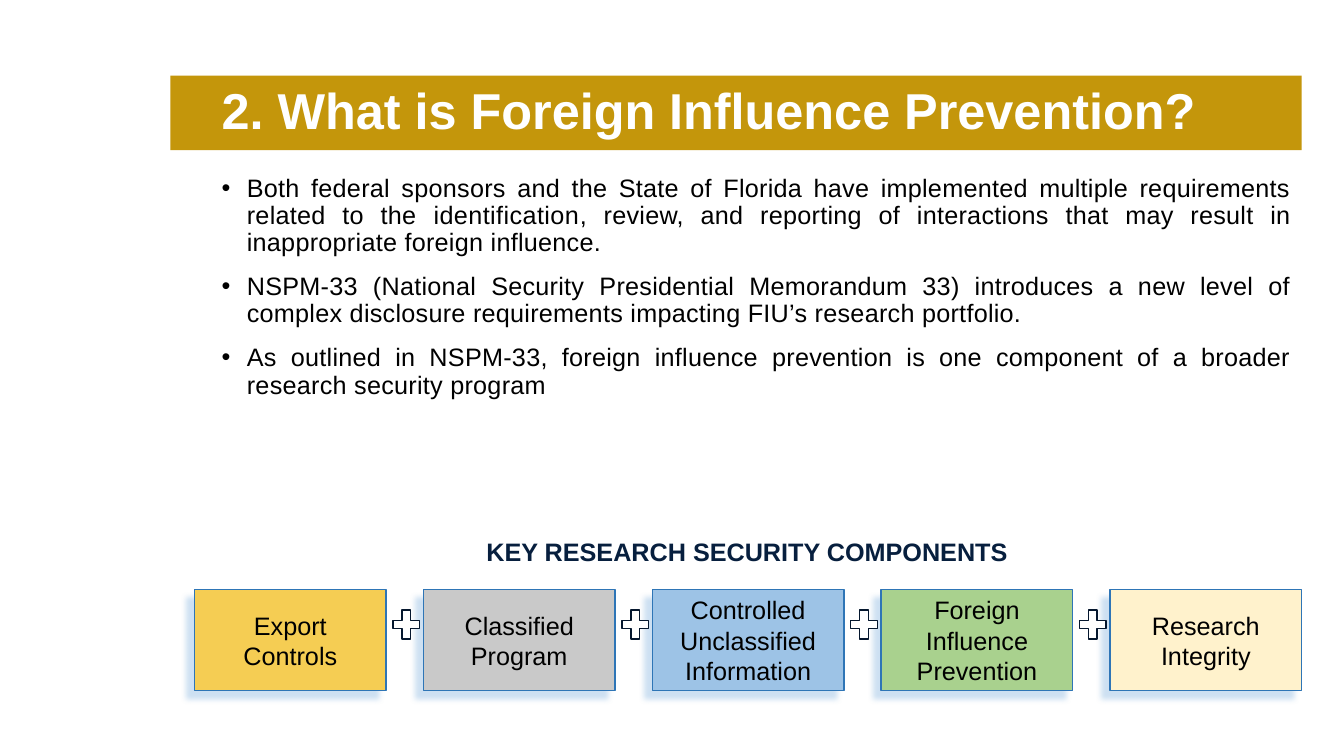
from lxml.etree import SubElement
from pptx import Presentation
from pptx.dml.color import RGBColor
from pptx.enum.shapes import MSO_SHAPE as Shape
from pptx.enum.text import MSO_ANCHOR as Anchor, PP_ALIGN as Align
from pptx.oxml.ns import qn
from pptx.util import Inches, Pt


def paint(target, color):
    """Give a fill, or the fill of a line or font, one solid colour."""
    target.solid()
    target.fore_color.rgb = RGBColor.from_string(color)


def add_span(para, text, size, color, bold=False):
    span = para.add_run()
    span.text = text
    span.font.name = "Arial"
    span.font.size = Pt(size)
    span.font.bold = bold
    paint(span.font.fill, color)
    return span


deck = Presentation()
deck.slide_width, deck.slide_height = Inches(13.33), Inches(7.5)
page = deck.slides.add_slide(deck.slide_layouts[6])

# Title on its gold band
band = page.shapes.add_shape(Shape.RECTANGLE, Inches(1.69), Inches(0.75), Inches(11.22), Inches(0.74))
band.shadow.inherit = False
paint(band.fill, "C4960B")
band.line.fill.background()

title = page.shapes.add_textbox(Inches(2.1), Inches(0.4), Inches(10.32), Inches(1.45)).text_frame
title.word_wrap = True
title.vertical_anchor = Anchor.MIDDLE
title.paragraphs[0].line_spacing = 0.9
add_span(title.paragraphs[0], "2. What is Foreign Influence Prevention?", 36, "FFFFFF", True)

# Bullets: each is a list of (text, letter spacing in hundredths of a point)
bullets = [
    [("Both federal sponsors and the State of Florida have implemented multiple requirements related to the ", 20),
     ("identification", 30),
     (", review, and reporting of interactions that may result in inappropriate foreign influence.", 20)],
    [("NSPM-33 (National Security Presidential Memorandum 33) introduces a new level of complex "
      "disclosure requirements impacting FIU’s research portfolio.", 20)],
    [("As outlined in NSPM-33, foreign influence prevention is one component of a broader "
      "research security program", 20)],
]
body = page.shapes.add_textbox(Inches(2.1), Inches(1.69), Inches(10.81), Inches(4.47)).text_frame
body.word_wrap = True
for index, pieces in enumerate(bullets):
    para = body.add_paragraph() if index else body.paragraphs[0]
    para.alignment = Align.JUSTIFY
    para.line_spacing = 0.9
    para.space_before = Pt(6 if index else 0)
    para.space_after = Pt(6)
    props = para._p.get_or_add_pPr()
    props.set("marL", str(Inches(0.25)))
    props.set("indent", str(Inches(-0.25)))
    SubElement(props, qn("a:buFont"), typeface="Arial")
    SubElement(props, qn("a:buChar"), char="•")
    for text, spacing in pieces:
        span = add_span(para, text, 18, "000000")
        span.font._element.set("spc", str(spacing))

# Row of components
components = [
    ("Export Controls", "F5CD53"),
    ("Classified Program", "C9C9C9"),
    ("Controlled Unclassified Information", "9DC3E6"),
    ("Foreign Influence Prevention", "A9D18E"),
    ("Research Integrity", "FFF2CC"),
]
pitch = 2.27
for index, (name, color) in enumerate(components):
    box = page.shapes.add_shape(Shape.RECTANGLE, Inches(1.93 + index * pitch), Inches(5.85),
                                Inches(1.9), Inches(1))
    paint(box.fill, color)
    paint(box.line.fill, "2E75B6")
    box.line.width = Pt(1)
    box.shadow.inherit = False
    effects = box._element.spPr.find(qn("a:effectLst"))
    shadow = SubElement(effects, qn("a:outerShdw"), blurRad=str(Pt(4)), dist=str(Pt(8)),
                        dir=str(135 * 60000), algn="tr", rotWithShape="0")
    tint = SubElement(shadow, qn("a:srgbClr"), val="9DC3E6")
    SubElement(tint, qn("a:alpha"), val="50000")
    frame = box.text_frame
    frame.word_wrap = True
    frame.vertical_anchor = Anchor.MIDDLE
    frame.paragraphs[0].alignment = Align.CENTER
    add_span(frame.paragraphs[0], name, 18, "000000")

for index in range(len(components) - 1):
    plus = page.shapes.add_shape(Shape.MATH_PLUS, Inches(3.85 + index * pitch), Inches(6),
                                 Inches(0.36), Inches(0.39))
    plus.shadow.inherit = False
    paint(plus.fill, "FFFFFF")
    paint(plus.line.fill, "05172E")
    plus.line.width = Pt(1)

heading = page.shapes.add_textbox(Inches(1.91), Inches(5.27), Inches(11), Inches(0.4)).text_frame
heading.word_wrap = True
heading.paragraphs[0].alignment = Align.CENTER
add_span(heading.paragraphs[0], "KEY RESEARCH SECURITY COMPONENTS", 18, "071F3E", True)

deck.save("out.pptx")
